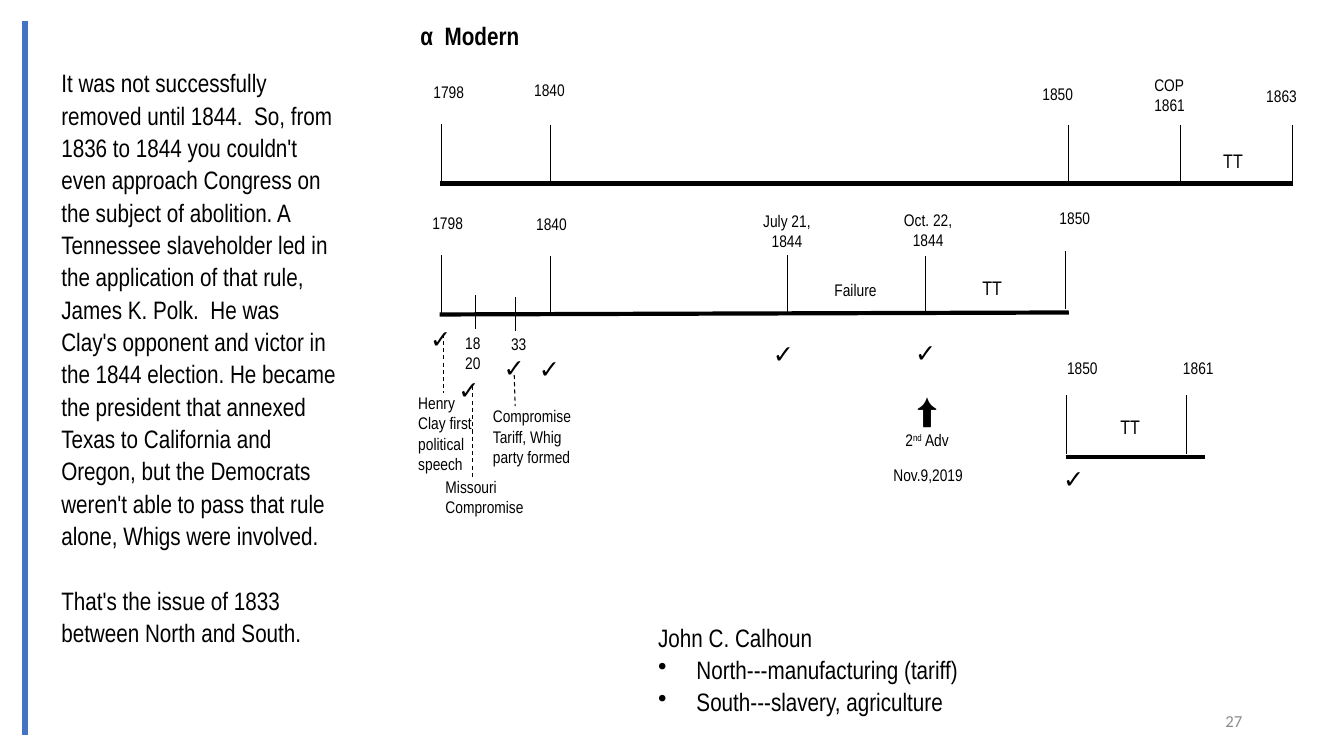
from dataclasses import dataclass

import pptx
import pptx.dml.color
import pptx.enum.dml
import pptx.enum.shapes
import pptx.enum.text
import pptx.oxml.xmlchemy
import pptx.util
from pptx.util import Inches

BLACK = pptx.dml.color.RGBColor(0x00, 0x00, 0x00)
GRAY = pptx.dml.color.RGBColor(0x8C, 0x8C, 0x8C)
BLUE = pptx.dml.color.RGBColor(0x44, 0x72, 0xC4)
LEFT = pptx.enum.text.PP_ALIGN.LEFT
CENTER = pptx.enum.text.PP_ALIGN.CENTER
RIGHT = pptx.enum.text.PP_ALIGN.RIGHT
TOP = pptx.enum.text.MSO_ANCHOR.TOP
MIDDLE = pptx.enum.text.MSO_ANCHOR.MIDDLE
TICK_HEIGHT = 0.58


@dataclass
class Label:
    text: str
    left: float
    top: float
    width: float
    align: pptx.enum.text.PP_ALIGN = CENTER
    size: int = 12
    rows: int = 1


@dataclass
class Tick:
    x: float
    top: float
    date: Label


@dataclass
class Timeline:
    start: tuple[float, float]
    end: tuple[float, float]
    ticks: list[Tick]


TIMELINES = [
    Timeline((4.36, 1.82), (12.82, 1.82), [
        Tick(4.38, 1.23, Label("1798", 4.2, 0.76, 0.67, LEFT)),
        Tick(5.46, 1.24, Label("1840", 5.13, 0.74, 0.64)),
        Tick(10.6, 1.24, Label("1850", 10.24, 0.78, 0.64, LEFT)),
        Tick(11.71, 1.24, Label("COP\n1861", 11.35, 0.69, 0.64, LEFT, rows=2)),
        Tick(12.82, 1.24, Label("1863", 12.46, 0.8, 0.62, LEFT)),
    ]),
    Timeline((4.36, 3.12), (10.6, 3.1), [
        Tick(4.38, 2.53, Label("1798", 4.16, 2.06, 0.56)),
        Tick(5.46, 2.54, Label("1840", 5.15, 2.07, 0.64)),
        Tick(7.81, 2.53, Label("July 21,\n1844", 7.4, 2.04, 0.81, rows=2)),
        Tick(9.18, 2.54, Label("Oct. 22,\n1844", 8.73, 2.03, 0.95, rows=2)),
        Tick(10.57, 2.49, Label("1850", 10.34, 2.01, 0.64)),
    ]),
    Timeline((10.57, 4.53), (11.95, 4.53), [
        Tick(10.58, 3.92, Label("1850", 10.3, 3.5, 0.87)),
        Tick(11.77, 3.92, Label("1861", 11.55, 3.5, 0.67)),
    ]),
]
SHORT_TICKS = [(4.72, 2.93), (5.11, 2.95)]
NOTES = [
    Label("TT", 11.91, 1.43, 0.64, size=14),
    Label("TT", 9.52, 2.69, 0.64, size=14),
    Label("TT", 10.89, 4.07, 0.64, size=14),
    Label("Failure", 8.08, 2.73, 0.81),
    Label("18\n20", 4.42, 3.25, 0.54, rows=2),
    Label("33", 4.88, 3.26, 0.53),
    Label("Nov.9,2019", 8.73, 4.56, 0.95),
    Label("Henry Clay first political speech", 4.05, 3.85, 0.84, LEFT, rows=4),
    Label("Missouri\nCompromise", 4.32, 4.68, 1.09, LEFT, rows=2),
    Label("Compromise\nTariff, Whig party formed", 4.79, 3.98, 1.09, LEFT, rows=3),
]
CHECKS = [(4.37, 3.16), (4.65, 3.66), (5.1, 3.45), (5.45, 3.46),
          (7.77, 3.31), (9.18, 3.3), (10.65, 4.55)]
CHECK_WIDTH = 0.42
DASHED_LEADERS = [
    ((4.4, 3.31), (4.4, 3.9)),
    ((4.69, 3.83), (4.69, 4.76)),
    ((5.1, 3.72), (5.11, 4.03)),
]
STORY = (
    "It was not successfully removed until 1844.  So, from 1836 to 1844 you couldn't "
    "even approach Congress on the subject of abolition. A Tennessee slaveholder led in "
    "the application of that rule, James K. Polk.  He was Clay's opponent and victor in "
    "the 1844 election. He became the president that annexed Texas to California and "
    "Oregon, but the Democrats weren't able to pass that rule alone, Whigs were involved.\n"
    "That's the issue of 1833 between North and South."
)


def add_run(paragraph, text: str, *, size: float = 12, bold: bool = False,
            color=BLACK, font: str = "Arial Narrow", superscript: bool = False) -> None:
    run = paragraph.add_run()
    run.text = text
    run.font.name = font
    run.font.size = pptx.util.Pt(size)
    run.font.bold = bold
    run.font.color.rgb = color
    if superscript:
        run._r.get_or_add_rPr().set("baseline", "30000")


def write(shape, text: str, *, align=LEFT, anchor=TOP, spacing: float = 1.0,
          gap: float = 0, **run_format):
    """Fill a shape with one paragraph per line of text and return its paragraphs."""
    frame = shape.text_frame
    frame.word_wrap = True
    frame.auto_size = pptx.enum.text.MSO_AUTO_SIZE.NONE
    frame.vertical_anchor = anchor
    for index, line in enumerate(text.split("\n")):
        paragraph = frame.add_paragraph() if index else frame.paragraphs[0]
        paragraph.alignment = align
        paragraph.line_spacing = spacing
        paragraph.space_before = pptx.util.Pt(gap if index else 0)
        if line:
            add_run(paragraph, line, **run_format)
    return frame.paragraphs


def add_text(slide, text: str, left: float, top: float, width: float, height: float, **text_format):
    box = slide.shapes.add_textbox(Inches(left), Inches(top), Inches(width), Inches(height))
    return write(box, text, **text_format)


def add_label(slide, label: Label) -> None:
    height = 0.1 + label.rows * label.size / 60
    add_text(slide, label.text, label.left, label.top, label.width, height,
             align=label.align, size=label.size)


def add_line(slide, start: tuple[float, float], end: tuple[float, float], *,
             width: float = 0.75, color=BLACK, dashed: bool = False) -> None:
    line = slide.shapes.add_connector(
        pptx.enum.shapes.MSO_CONNECTOR.STRAIGHT, *map(Inches, start + end))
    line.line.color.rgb = color
    line.line.width = pptx.util.Pt(width)
    if dashed:
        line.line.dash_style = pptx.enum.dml.MSO_LINE.DASH
    line._element.spPr.append(pptx.oxml.xmlchemy.OxmlElement("a:effectLst"))


def add_bullet(paragraph) -> None:
    properties = paragraph._p.get_or_add_pPr()
    properties.set("marL", str(Inches(0.38)))
    properties.set("indent", str(Inches(-0.38)))
    bullet = pptx.oxml.xmlchemy.OxmlElement("a:buChar")
    bullet.set("char", "•")
    properties.append(bullet)


def add_timeline(slide, timeline: Timeline) -> None:
    add_line(slide, timeline.start, timeline.end, width=3)
    for tick in timeline.ticks:
        add_line(slide, (tick.x, tick.top), (tick.x, tick.top + TICK_HEIGHT))
        add_label(slide, tick.date)


def main() -> None:
    deck = pptx.Presentation()
    deck.slide_width, deck.slide_height = Inches(13.33), Inches(7.5)
    slide = deck.slides.add_slide(deck.slide_layouts.get_by_name("Title Only"))

    heading = slide.shapes.title
    heading.left, heading.top = Inches(4.07), Inches(0.15)
    heading.width, heading.height = Inches(1.81), Inches(0.4)
    write(heading, "α  Modern", size=18, bold=True)

    add_text(slide, "27", 9.42, 6.95, 3, 0.4, align=RIGHT, anchor=MIDDLE,
             color=GRAY, font="Calibri")
    add_text(slide, STORY, 0.51, 0.6, 2.96, 5.92, size=18, spacing=1.07, gap=23)
    add_line(slide, (0.25, 0.21), (0.25, 7.29), width=4.5, color=BLUE)

    for timeline in TIMELINES:
        add_timeline(slide, timeline)
    for x, top in SHORT_TICKS:
        add_line(slide, (x, top), (x, top + 0.33))
    for note in NOTES:
        add_label(slide, note)
    for center, top in CHECKS:
        add_text(slide, "✓", center - CHECK_WIDTH / 2, top, CHECK_WIDTH, 0.4,
                 align=CENTER, size=18, bold=True)
    for start, end in DASHED_LEADERS:
        add_line(slide, start, end, dashed=True)

    arrow, advent = add_text(slide, "\n", 8.79, 3.81, 0.81, 0.71, align=CENTER)
    add_run(arrow, "⬆", size=24)
    add_run(advent, "2")
    add_run(advent, "nd", superscript=True)
    add_run(advent, " Adv")

    calhoun = add_text(
        slide, "John C. Calhoun\nNorth---manufacturing (tariff)\nSouth---slavery, agriculture",
        6.43, 6.1, 3.86, 1.05, size=18, spacing=1.07)
    for region in calhoun[1:]:
        add_bullet(region)

    deck.save("out.pptx")


if __name__ == "__main__":
    main()
